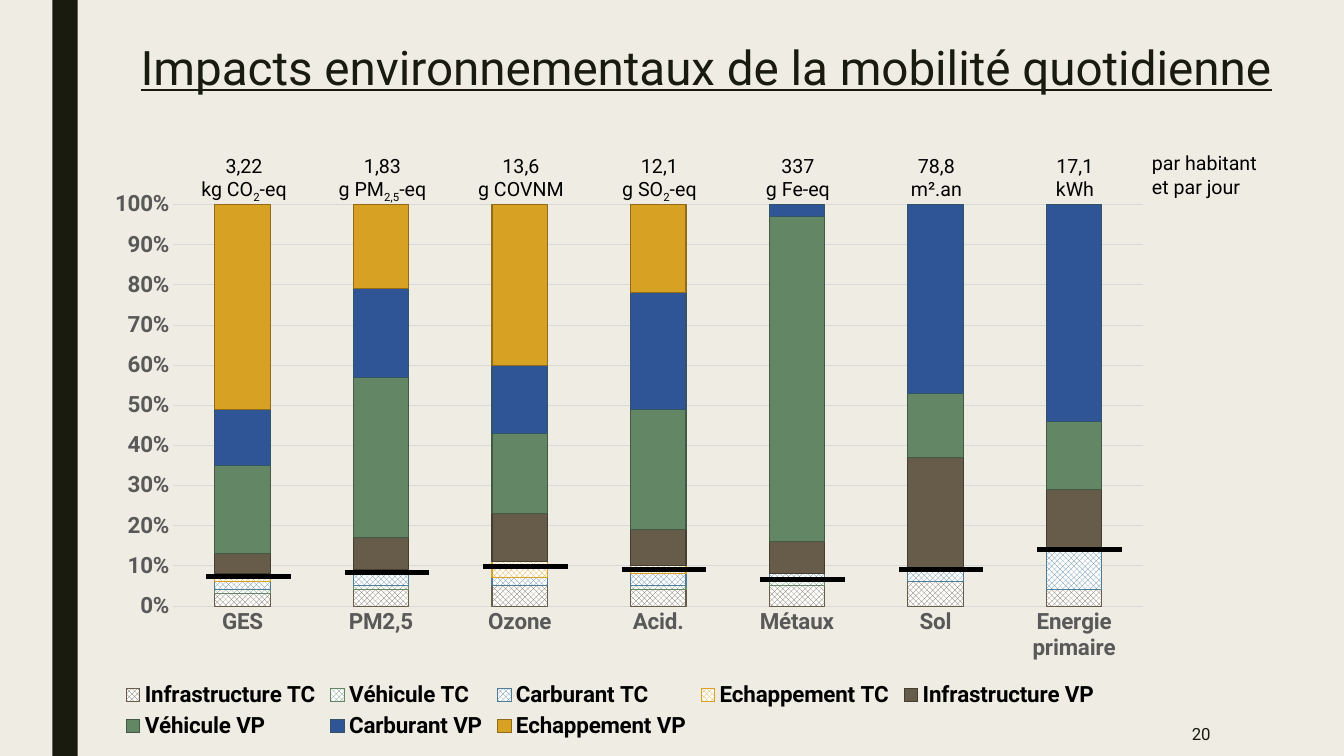
from lxml import etree
from pptx import Presentation
from pptx.chart.data import CategoryChartData
from pptx.dml.color import RGBColor
from pptx.enum.chart import XL_CHART_TYPE, XL_LEGEND_POSITION, XL_TICK_MARK
from pptx.enum.dml import MSO_PATTERN
from pptx.enum.shapes import MSO_CONNECTOR, MSO_SHAPE
from pptx.enum.text import MSO_ANCHOR, MSO_AUTO_SIZE, PP_ALIGN
from pptx.oxml import parse_xml
from pptx.oxml.ns import nsdecls, qn
from pptx.util import Cm, Pt

CENTER, LEFT, RIGHT = PP_ALIGN.CENTER, PP_ALIGN.LEFT, PP_ALIGN.RIGHT
MIDDLE, TOP = MSO_ANCHOR.MIDDLE, MSO_ANCHOR.TOP
NO_TICK = XL_TICK_MARK.NONE
FONT = "Roboto"
INK, BLACK, GREY, GRID = "191B0E", "000000", "595959", "D9D9D9"


def color(hex_text):
    return RGBColor.from_string(hex_text)


def style(font, size, hex_text, bold=False):
    font.name = FONT
    font.size = Pt(size)
    font.bold = bold
    font.color.rgb = color(hex_text)


deck = Presentation()
deck.slide_width, deck.slide_height = Cm(33.87), Cm(19.05)
page = deck.slides.add_slide(deck.slide_layouts[5])
page.background.fill.solid()
page.background.fill.fore_color.rgb = color("EFEDE3")

# Title
title = page.shapes.title
title.left, title.top, title.width, title.height = Cm(2.72), Cm(1.02), Cm(30.15), Cm(1.5)
title.text_frame.text = "Impacts environnementaux de la mobilité quotidienne"
title.text_frame.auto_size = MSO_AUTO_SIZE.NONE
title.text_frame.vertical_anchor = MIDDLE
para = title.text_frame.paragraphs[0]
para.alignment = CENTER
para.line_spacing = 0.89
style(para.runs[0].font, 34, INK)
para.runs[0].font.underline = True

# Side band
band = page.shapes.add_shape(MSO_SHAPE.RECTANGLE, Cm(1.32), 0, Cm(0.64), deck.slide_height)
band.shadow.inherit = False
band.fill.solid()
band.fill.fore_color.rgb = color(INK)
band.line.fill.background()

# Chart data: TC = public transport (hatched), VP = private cars (solid)
chart_data = CategoryChartData(number_format="0%")
chart_data.categories = ["GES", "PM2,5", "Ozone", "Acid.", "Métaux", "Sol", "Energie primaire"]
series_rows = [  # name, values, fill, line, hatched
    ("Infrastructure TC", (0.03, 0.04, 0.05, 0.04, 0.05, 0.06, 0.04), "675C49", "675C49", True),
    ("Véhicule TC", (0.01, 0.01, 0, 0.01, 0.01, 0, 0), "638764", "638764", True),
    ("Carburant TC", (0.02, 0.03, 0.02, 0.03, 0.02, 0.03, 0.1), "4D7D99", "4D7D99", True),
    ("Echappement TC", (0.02, 0.01, 0.04, 0.02, 0, 0, 0), "D7A124", "D7A124", True),
    ("Infrastructure VP", (0.05, 0.08, 0.12, 0.09, 0.08, 0.28, 0.15), "675C49", "443E30", False),
    ("Véhicule VP", (0.22, 0.4, 0.2, 0.3, 0.81, 0.16, 0.17), "638764", "425A43", False),
    ("Carburant VP", (0.14, 0.22, 0.17, 0.29, 0.04, 0.47, 0.54), "2F5597", "335366", False),
    ("Echappement VP", (0.53, 0.21, 0.4, 0.23, 0, 0, 0), "D7A124", "906B18", False),
]
for name, values, *_ in series_rows:
    chart_data.add_series(name, values)
chart = page.shapes.add_chart(XL_CHART_TYPE.COLUMN_STACKED, Cm(2.72), Cm(4.8),
                              Cm(26.11), Cm(14.25), chart_data).chart
style(chart.font, 10, BLACK)
chart.has_title = False

# Columns
plot = chart.plots[0]
plot.gap_width, plot.overlap = 150, 100
plot.vary_by_categories = False
for series, (_, _, fill_color, line_color, hatched) in zip(plot.series, series_rows):
    fill = series.format.fill
    if hatched:
        fill.patterned()
        fill.pattern = MSO_PATTERN.LARGE_CHECKER_BOARD
        fill.back_color.rgb = color("FFFFFF")
    else:
        fill.solid()
    fill.fore_color.rgb = color(fill_color)
    series.format.line.color.rgb = color(line_color)
    series.format.line.width = Pt(0.75)
    series.invert_if_negative = False

# Axes
for axis in (chart.category_axis, chart.value_axis):
    axis.major_tick_mark = axis.minor_tick_mark = NO_TICK
    style(axis.tick_labels.font, 16, GREY, True)
percent_axis = chart.value_axis
percent_axis.minimum_scale, percent_axis.maximum_scale, percent_axis.major_unit = 0, 1, 0.1
percent_axis.tick_labels.number_format = "0%"
percent_axis.tick_labels.number_format_is_linked = False
percent_axis.format.line.fill.background()
for line in (chart.category_axis.format.line, percent_axis.major_gridlines.format.line):
    line.color.rgb = color(GRID)
    line.width = Pt(0.75)

# Legend
chart.has_legend = True
legend = chart.legend
legend.position = XL_LEGEND_POSITION.BOTTOM
legend.include_in_layout = False
style(legend.font, 16, BLACK, True)

# Fixed places of plot area and legend, as fractions of the chart
plot_area = chart._chartSpace.chart.plotArea
for old_layout in plot_area.findall(qn("c:layout")):
    plot_area.remove(old_layout)
for old_layout in legend._element.findall(qn("c:layout")):
    legend._element.remove(old_layout)
for parent, index, target, fractions in (
        (plot_area, 0, '<c:layoutTarget val="inner"/>', (0.081, 0.025, 0.937 - 0.02 + 0.02, 0.71)),
        (legend._element, 1, "", (0.01, 0.86, 0.95, 0.12))):
    x, y, width, height = fractions
    parent.insert(index, parse_xml(
        f'<c:layout {nsdecls("c")}><c:manualLayout>{target}'
        f'<c:xMode val="edge"/><c:yMode val="edge"/><c:x val="{x}"/><c:y val="{y}"/>'
        f'<c:w val="{width}"/><c:h val="{height}"/></c:manualLayout></c:layout>'))

# Marks on top of the public transport share
COLUMN_STEP = 3.49
for column, mark_y in enumerate((14.53, 14.43, 14.27, 14.35, 14.6, 14.35, 13.84)):
    mark_x = 5.2 + column * COLUMN_STEP
    mark = page.shapes.add_connector(MSO_CONNECTOR.STRAIGHT, Cm(mark_x), Cm(mark_y),
                                     Cm(mark_x + 2.13), Cm(mark_y))
    mark.line.color.rgb = color(BLACK)
    mark.line.width = Pt(3.5)
    etree.SubElement(mark._element.spPr, qn("a:effectLst"))

# Totals above the columns, unit note and page number; "_" surrounds a subscript
totals = ("3,22\nkg CO_2_-eq", "1,83\ng PM_2,5_-eq", "13,6\ng COVNM", "12,1\ng SO_2_-eq",
          "337\ng Fe-eq", "78,8\nm².an", "17,1\nkWh")
labels = [(4.5 + column * COLUMN_STEP, 3.75, 3.3, 1.45, text, 14, BLACK, CENTER, TOP)
          for column, text in enumerate(totals)]
labels.append((28.78, 3.68, 3.58, 1.45, "par habitant et par jour", 14, BLACK, LEFT, TOP))
labels.append((26.31, 17.93, 4.45, 1.12, "20", 12, INK, RIGHT, MIDDLE))
for left, top, width, height, text, size, ink, alignment, anchor in labels:
    box = page.shapes.add_textbox(Cm(left), Cm(top), Cm(width), Cm(height))
    frame = box.text_frame
    frame.word_wrap = True
    frame.vertical_anchor = anchor
    for row, line_text in enumerate(text.split("\n")):
        para = frame.add_paragraph() if row else frame.paragraphs[0]
        para.alignment = alignment
        for part, part_text in enumerate(line_text.split("_")):
            span = para.add_run()
            span.text = part_text
            style(span.font, size, ink)
            if part == 1:
                span._r.get_or_add_rPr().set("baseline", "-25000")

deck.save("out.pptx")
